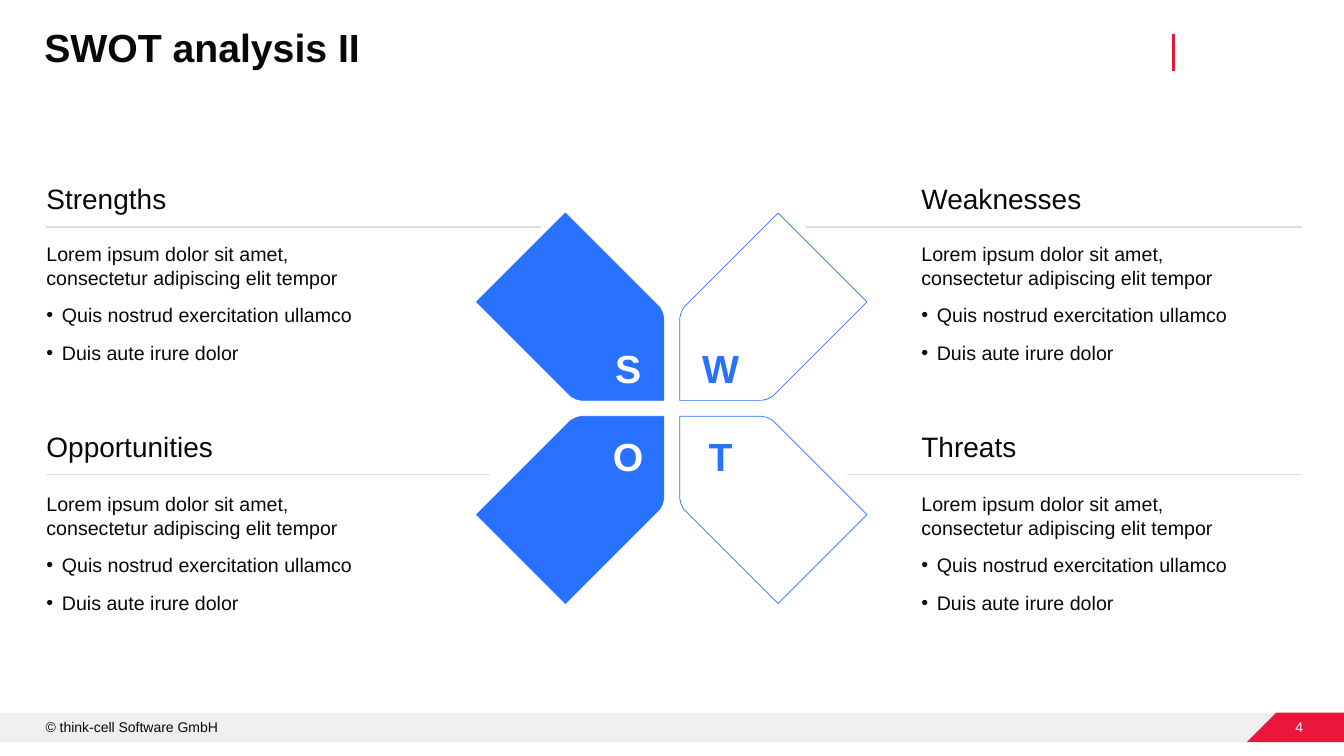
"""Build a SWOT slide: four petals around a centre, each with a heading, rule and notes."""
from copy import deepcopy
from dataclasses import dataclass

from lxml import etree
from pptx import Presentation
from pptx.dml.color import RGBColor
from pptx.enum import shapes, text
from pptx.oxml.ns import qn
from pptx.util import Cm, Pt


@dataclass(frozen=True)
class Theme:
    font: str = "Arial"
    ink: str = "080808"
    white: str = "FFFFFF"
    blue: str = "2972FF"
    red: str = "E9163C"
    rule: str = "DCDCDC"
    band: str = "EFEFF1"
    title: int = 28
    heading: int = 20
    body: int = 14
    small: int = 10


THEME = Theme()
TITLE = "SWOT analysis II"
COPYRIGHT = "© think-cell Software GmbH"
PAGE_NUMBER = "4"
INTRO = "Lorem ipsum dolor sit amet,\nconsectetur adipiscing elit tempor"
BULLETS = ["Quis nostrud exercitation ullamco", "Duis aute irure dolor"]

# heading, letter, column side, row side, inner end of the rule
QUADRANTS = [
    ("Strengths", "S", -1, -1, 13.64),
    ("Weaknesses", "W", 1, -1, 20.32),
    ("Opportunities", "O", -1, 1, 12.34),
    ("Threats", "T", 1, 1, 21.34),
]
COLUMN_LEFT = {-1: 1.17, 1: 23.22}
RULE_OUTER = {-1: 1.17, 1: 32.82}
ROW_TOP = {-1: (4.55, 5.72, 6.1), 1: (10.8, 11.96, 12.4)}
COLUMN_WIDTH = 9.6
CENTRE = (16.93, 10.29)
LETTER_OFFSET = {-1: (-1.1, -1.01), 1: (1.23, 1.19)}
HALF_PETAL = [(2.26, 0.2), (2.4, 0.23), (2.54, 0.3), (4.92, 2.68)]
PETAL = [(0.2, 0.2)] + HALF_PETAL + [(y, x) for x, y in reversed(HALF_PETAL)]

BAND = [(0, 17.96), (33.87, 17.96), (33.87, 18.7), (0, 18.7)]
CORNER = [(32.16, 17.96), (33.87, 17.96), (33.87, 18.7), (31.42, 18.7)]


def add_text(page, paragraphs, place, size, color, bold=False, wrap=True,
             anchor=text.MSO_ANCHOR.TOP, align=text.PP_ALIGN.LEFT, spacing=1.0, bulleted=False):
    box = page.shapes.add_textbox(*map(Cm, place))
    frame = box.text_frame
    frame_format = dict(word_wrap=wrap, vertical_anchor=anchor, margin_left=0,
                        margin_right=0, margin_top=0, margin_bottom=0)
    for name, value in frame_format.items():
        setattr(frame, name, value)
    font_format = dict(name=THEME.font, size=Pt(size), bold=bold)
    for index, words in enumerate(paragraphs):
        para = frame.paragraphs[0] if index == 0 else frame.add_paragraph()
        para.text = words
        para.alignment = align
        para.line_spacing = spacing
        if index:
            para.space_before = Pt(10)
        if bulleted and index:
            add_bullet(para)
        for span in para.runs:
            for name, value in font_format.items():
                setattr(span.font, name, value)
            span.font.color.rgb = RGBColor.from_string(color)
        for line_break in para._p.findall(qn("a:br")):
            line_break.insert(0, deepcopy(para.runs[0]._r.rPr))


def add_bullet(para):
    properties = para._p.get_or_add_pPr()
    properties.set("marL", str(Cm(0.39)))
    properties.set("indent", str(-Cm(0.39)))
    etree.SubElement(properties, qn("a:buFont")).set("typeface", THEME.font)
    etree.SubElement(properties, qn("a:buChar")).set("char", "•")


def add_outline(page, points, fill=None, line=None):
    corners = [(Cm(x), Cm(y)) for x, y in points]
    builder = page.shapes.build_freeform(*corners[0])
    builder.add_line_segments(corners[1:], close=True)
    outline = builder.convert_to_shape()
    outline.shadow.inherit = False
    if fill:
        outline.fill.solid()
        outline.fill.fore_color.rgb = RGBColor.from_string(fill)
    else:
        outline.fill.background()
    if line:
        outline.line.color.rgb = RGBColor.from_string(line)
        outline.line.width = Pt(0.5)
    else:
        outline.line.fill.background()


def add_rule(page, start, end, color, width):
    rule = page.shapes.add_connector(shapes.MSO_CONNECTOR.STRAIGHT, *map(Cm, start + end))
    rule.line.color.rgb = RGBColor.from_string(color)
    rule.line.width = Pt(width)
    etree.SubElement(rule._element.spPr, qn("a:effectLst"))


def add_frame(page):
    add_outline(page, BAND, THEME.band)
    add_outline(page, CORNER, THEME.red)
    add_rule(page, (29.57, 0.86), (29.57, 1.78), THEME.red, 2.25)
    add_text(page, [COPYRIGHT], (1.15, 18.11, 6.25, 0.43), THEME.small, THEME.ink)
    add_text(page, [PAGE_NUMBER], (32.41, 18.11, 0.43, 0.43), THEME.small, THEME.white,
             wrap=False, anchor=text.MSO_ANCHOR.MIDDLE, align=text.PP_ALIGN.RIGHT)
    add_text(page, [TITLE], (1.12, 0.71, 28.02, 1.07), THEME.title, THEME.ink,
             bold=True, spacing=0.9)


def add_quadrant(page, heading, letter, column, row, rule_inner):
    left = COLUMN_LEFT[column]
    heading_top, rule_top, body_top = ROW_TOP[row]
    add_rule(page, (RULE_OUTER[column], rule_top), (rule_inner, rule_top), THEME.rule, 0.75)
    add_text(page, [heading], (left, heading_top, COLUMN_WIDTH, 0.86), THEME.heading,
             THEME.ink, anchor=text.MSO_ANCHOR.BOTTOM)
    add_text(page, [INTRO] + BULLETS, (left, body_top, COLUMN_WIDTH, 3.1), THEME.body,
             THEME.ink, bulleted=True)

    filled = column < 0
    petal = [(CENTRE[0] + column * x, CENTRE[1] + row * y) for x, y in PETAL]
    add_outline(page, petal, THEME.blue if filled else None, THEME.blue)
    letter_x = CENTRE[0] + LETTER_OFFSET[column][0]
    letter_y = CENTRE[1] + LETTER_OFFSET[row][1]
    add_text(page, [letter], (letter_x - 0.5, letter_y - 0.6, 1, 1.2), THEME.title,
             THEME.white if filled else THEME.blue, bold=True, wrap=False,
             anchor=text.MSO_ANCHOR.MIDDLE, align=text.PP_ALIGN.CENTER)


def main():
    deck = Presentation()
    deck.slide_width, deck.slide_height = Cm(33.87), Cm(19.05)
    page = deck.slides.add_slide(deck.slide_layouts[6])
    add_frame(page)
    for quadrant in QUADRANTS:
        add_quadrant(page, *quadrant)
    deck.save("out.pptx")


if __name__ == "__main__":
    main()
